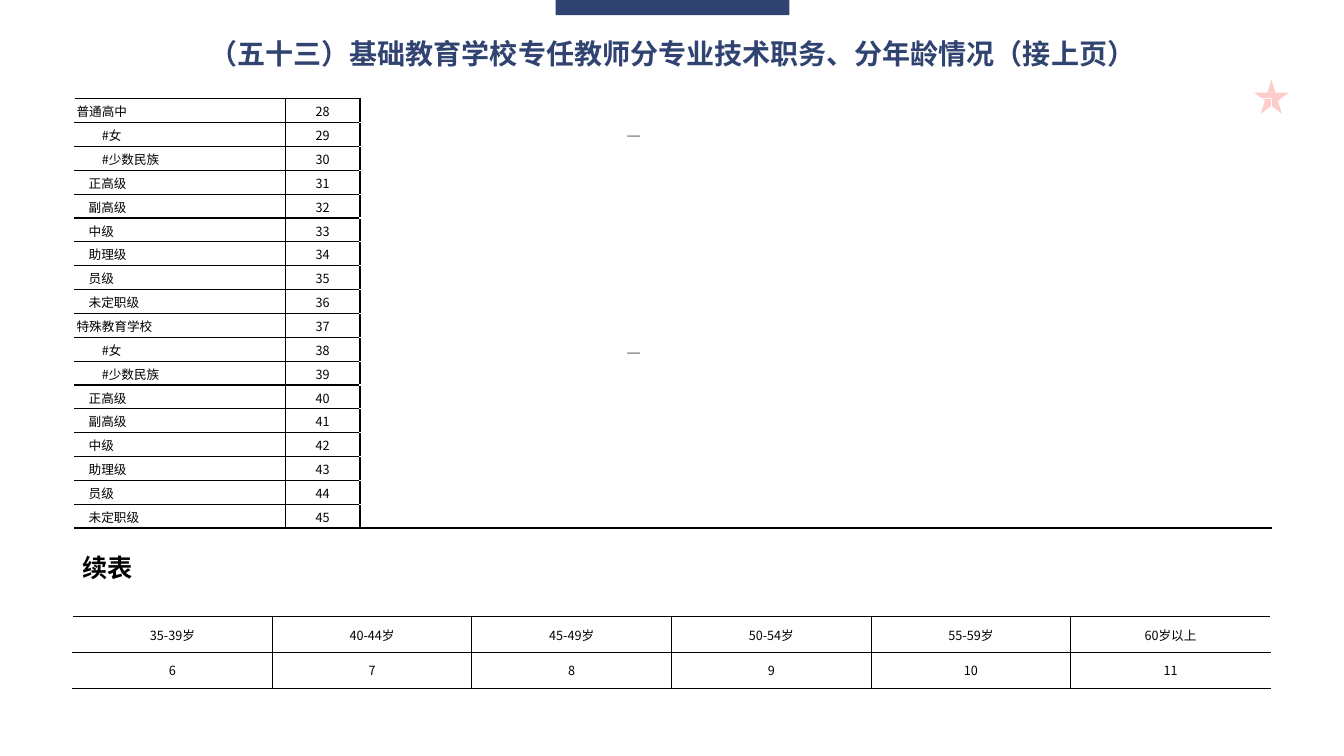
from lxml.etree import SubElement
from pptx import Presentation
from pptx.dml.color import RGBColor
from pptx.enum.shapes import MSO_SHAPE as Preset
from pptx.enum.text import MSO_ANCHOR as Anchor, MSO_AUTO_SIZE as AutoSize, PP_ALIGN as Align
from pptx.oxml import parse_xml
from pptx.oxml.ns import nsdecls, qn
from pptx.util import Inches, Pt

NAVY = RGBColor(0x30, 0x43, 0x71)
RED = RGBColor(0xFF, 0x00, 0x00)
BLACK = RGBColor(0x00, 0x00, 0x00)
SANS = "Noto Sans CJK SC"
SERIF = "Times New Roman"

RANKS = ["正高级", "副高级", "中级", "助理级", "员级", "未定职级"]
SCHOOLS = ["普通高中", "特殊教育学校"]
FIRST_ROW_NUMBER = 28
AGE_GROUPS = [("35-39", "岁"), ("40-44", "岁"), ("45-49", "岁"),
              ("50-54", "岁"), ("55-59", "岁"), ("60", "岁以上")]
FIRST_AGE_NUMBER = 6


def add_decoration(slide, preset, left, top, width, height, color):
    shape = slide.shapes.add_shape(
        preset, Inches(left), Inches(top), Inches(width), Inches(height))
    shape.shadow.inherit = False
    shape.fill.solid()
    shape.fill.fore_color.rgb = color
    shape.line.fill.background()
    return shape


def set_transparency(shape, opacity):
    color = shape.fill._xPr.find(".//" + qn("a:srgbClr"))
    SubElement(color, qn("a:alpha")).set("val", str(opacity * 1000))


def set_east_asian(properties):
    latin = properties.find(qn("a:latin"))
    latin.addnext(parse_xml(f'<a:ea {nsdecls("a")} typeface="{SANS}"/>'))


def format_paragraph(paragraph, size, name, color, bold=False):
    font = paragraph.font
    font.size, font.name, font.bold = Pt(size), name, bold
    font.color.rgb = color
    set_east_asian(paragraph._p.pPr.find(qn("a:defRPr")))


def place_heading(shape, text, box, size, name, color, margins):
    shape.left, shape.top, shape.width, shape.height = map(Inches, box)
    frame = shape.text_frame
    frame.text = text
    frame.auto_size = AutoSize.NONE
    frame.vertical_anchor = Anchor.MIDDLE
    frame.margin_left = frame.margin_right = Inches(margins)
    frame.margin_top = frame.margin_bottom = 0
    frame.word_wrap = False
    format_paragraph(frame.paragraphs[0], size, name, color, True)
    return frame.paragraphs[0]


def add_plain_table(slide, left, top, widths, row_height, row_count):
    frame = slide.shapes.add_table(
        row_count, len(widths), Inches(left), Inches(top),
        Inches(sum(widths)), Inches(row_height * row_count))
    table = frame.table
    table.first_row = table.horz_banding = False
    for column, width in zip(table.columns, widths):
        column.width = Inches(width)
    for row in table.rows:
        row.height = Inches(row_height)
    for cell in table.iter_cells():
        cell.fill.background()
        cell.vertical_anchor = Anchor.MIDDLE
        cell.margin_left = cell.margin_right = Inches(0.02)
        cell.margin_top = cell.margin_bottom = 0
        format_paragraph(cell.text_frame.paragraphs[0], 9, SERIF, BLACK)
    return table


def write_cell(cell, texts, align=Align.CENTER, indent=0.0, spacing=None):
    paragraph = cell.text_frame.paragraphs[0]
    paragraph.alignment = align
    paragraph.line_spacing = spacing
    if indent:
        paragraph._p.pPr.set("marL", "0")
        paragraph._p.pPr.set("indent", str(Inches(indent)))
    for text in texts:
        run = paragraph.add_run()
        run.text = text
        run.font.size = Pt(9)
        run.font.name = SANS if text.isascii() else SERIF
        set_east_asian(run._r.rPr)


def set_borders(cell, sides):
    properties = cell._tc.get_or_add_tcPr()
    for position, side in enumerate(side for side in "LRTB" if side in sides):
        properties.insert(position, parse_xml(
            f'<a:ln{side} {nsdecls("a")} w="{Pt(1)}"><a:solidFill>'
            f'<a:srgbClr val="{BLACK}"/></a:solidFill></a:ln{side}>'))


def add_rank_table(slide):
    entries = []
    for school in SCHOOLS:
        entries += [((school,), 0), (("#", "女"), 0.25), (("#", "少数民族"), 0.25)]
        entries += [((rank,), 0.12) for rank in RANKS]
    widths = [2.09, 0.74, 1.81, 1.81, 1.81, 1.81, 1.8]
    table = add_plain_table(slide, 0.74, 0.98, widths, 4.26 / len(entries), len(entries))
    spacing = Pt(14)
    for row, (texts, indent) in enumerate(entries):
        write_cell(table.cell(row, 0), texts, Align.JUSTIFY, indent, spacing)
        write_cell(table.cell(row, 1), [str(FIRST_ROW_NUMBER + row)], spacing=spacing)
        if texts[-1] == "女":
            write_cell(table.cell(row, 3), ["—"], spacing=spacing)
        bottom = "B" if row == len(entries) - 1 else ""
        sides = ["RTB", "LRTB", "L" + bottom] + [bottom] * 4
        for column, side in enumerate(sides):
            set_borders(table.cell(row, column), side)
    table.cell(1, 3).vertical_anchor = Anchor.TOP


def add_age_table(slide):
    count = len(AGE_GROUPS)
    table = add_plain_table(slide, 0.72, 6.12, [1.98] * count, 0.355, 2)
    for column, texts in enumerate(AGE_GROUPS):
        write_cell(table.cell(0, column), texts)
        write_cell(table.cell(1, column), [str(FIRST_AGE_NUMBER + column)])
        sides = "TB" + ("L" if column else "") + ("R" if column < count - 1 else "")
        for row in range(2):
            set_borders(table.cell(row, column), sides)


def main():
    presentation = Presentation()
    presentation.slide_width = Inches(13.33)
    presentation.slide_height = Inches(7.5)
    slide = presentation.slides.add_slide(presentation.slide_layouts[5])

    star = add_decoration(slide, Preset.STAR_5_POINT, 12.44, 0.79, 0.34, 0.34, RED)
    set_transparency(star, 20)
    add_decoration(slide, Preset.RECTANGLE, 5.51, -0.01, 2.32, 0.16, NAVY)

    title = place_heading(
        slide.shapes.title, "（五十三）基础教育学校专任教师分专业技术职务、分年龄情况（接上页）",
        (1.94, 0.31, 9.46, 0.44), 20, "Arial", NAVY, 0)
    title.alignment = Align.CENTER
    continued = place_heading(
        slide.shapes.add_textbox(0, 0, 0, 0), "续表",
        (0.72, 5.46, 0.71, 0.38), 18, SERIF, BLACK, 0.1)
    continued.line_spacing = 0.92

    add_rank_table(slide)
    add_age_table(slide)
    presentation.save("out.pptx")


if __name__ == "__main__":
    main()
